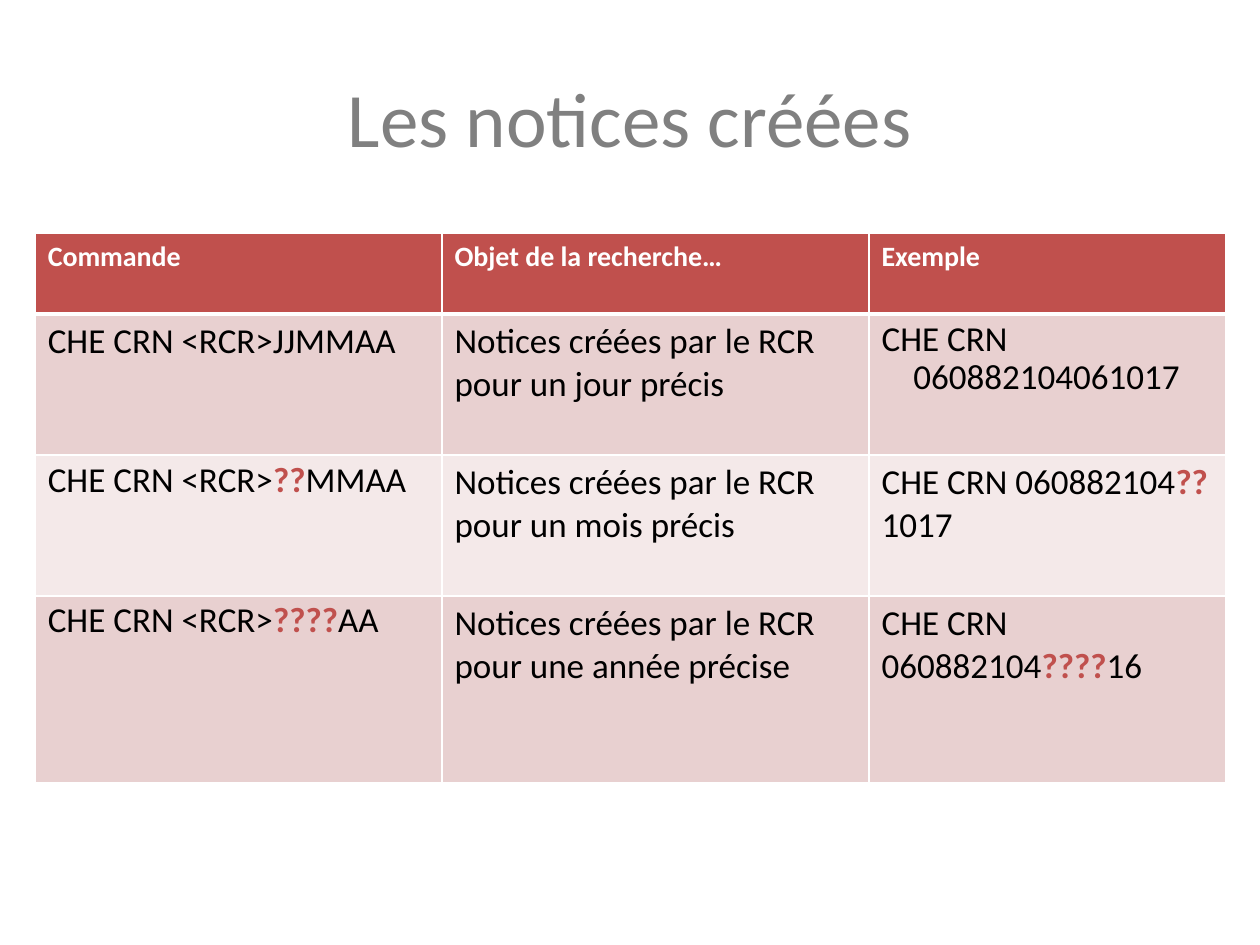
from lxml import etree
from pptx import Presentation
from pptx import util as u
from pptx.dml.color import RGBColor
from pptx.enum import text
from pptx.oxml.ns import qn

HUE = {"title": "808080", "head": "C0504D", "odd": "E8D0D0", "even": "F4E9E9",
       "ink": "000000", "mark": "C0504D", "line": "FFFFFF"}
HEADS = ["Commande", "Objet de la recherche…", "Exemple"]
# Each cell is a list of runs; every second run is a highlighted wildcard.
BODY = [
    [["CHE CRN <RCR>JJMMAA"],
     ["Notices créées par le RCR pour un jour précis"],
     ["CHE CRN 060882104061017"]],
    [["CHE CRN <RCR>", "??", "MMAA"],
     ["Notices créées par le RCR pour un mois précis"],
     ["CHE CRN 060882104", "??", "1017"]],
    [["CHE CRN <RCR>", "????", "AA"],
     ["Notices créées par le RCR pour une année précise"],
     ["CHE CRN 060882104", "????", "16"]],
]
WIDTHS = [8.2, 8.61, 7.19]
HEIGHTS = [1.63, 2.84, 2.84, 3.76]
TIGHT = {(1, 2), (2, 0), (3, 0)}
BOX = {"left": 1.27, "top": 0.76, "width": 22.86, "height": 3.18}


def style(font, hue, **look):
    for name, value in {"name": "Calibri", **look}.items():
        setattr(font, name, value)
    font.color.rgb = RGBColor.from_string(HUE[hue])


def add_title(slide, words):
    title = slide.shapes.title
    for name, value in BOX.items():
        setattr(title, name, u.Cm(value))
    frame = title.text_frame
    frame.vertical_anchor = text.MSO_ANCHOR.MIDDLE
    par = frame.paragraphs[0]
    par.alignment = text.PP_ALIGN.CENTER
    run = par.add_run()
    run.text = words
    style(run.font, "title", size=u.Pt(44))


def edge(cell, sides):
    """Draw cell borders; sides maps L, R, T, B to points."""
    props = cell._tc.get_or_add_tcPr()
    for side, width in sides.items():
        line = etree.SubElement(props, qn(f"a:ln{side}"), w=str(u.Pt(width)))
        fill = etree.SubElement(line, qn("a:solidFill"))
        etree.SubElement(fill, qn("a:srgbClr"), val=HUE["line"])


def fill_cell(cell, runs, back, sides, size, inks, bolds):
    edge(cell, sides)
    cell.fill.solid()
    cell.fill.fore_color.rgb = RGBColor.from_string(HUE[back])
    par = cell.text_frame.paragraphs[0]
    for i, words in enumerate(runs):
        run = par.add_run()
        run.text = words
        style(run.font, inks[i % 2], size=u.Pt(size), bold=bolds[i % 2])
    return par


def add_grid(slide):
    grid = slide.shapes.add_table(
        len(HEIGHTS), len(WIDTHS), u.Cm(0.71), u.Cm(4.7),
        u.Cm(sum(WIDTHS)), u.Cm(sum(HEIGHTS))).table
    for col, width in zip(grid.columns, WIDTHS):
        col.width = u.Cm(width)
    for row, height in zip(grid.rows, HEIGHTS):
        row.height = u.Cm(height)

    for c, words in enumerate(HEADS):
        fill_cell(grid.cell(0, c), [words], "head", {"L": 1, "R": 1, "T": 1, "B": 3},
                  16, ["line"], [True])
    for r, row in enumerate(BODY, 1):
        sides = {"L": 1, "R": 1, "T": 3 if r == 1 else 1, "B": 1}
        for c, runs in enumerate(row):
            par = fill_cell(grid.cell(r, c), runs, "odd" if r % 2 else "even",
                            sides, 20, ["ink", "mark"], [False, True])
            if (r, c) in TIGHT:
                par.line_spacing = 0.9
            if (r, c) == (1, 2):
                props = par._p.get_or_add_pPr()
                props.set("marL", str(u.Cm(0.64)))
                props.set("indent", str(u.Cm(-0.74)))


def main():
    deck = Presentation()
    deck.slide_width, deck.slide_height = u.Cm(25.4), u.Cm(19.05)
    slide = deck.slides.add_slide(deck.slide_layouts[5])
    add_title(slide, "Les notices créées")
    add_grid(slide)
    deck.save("out.pptx")


if __name__ == "__main__":
    main()
